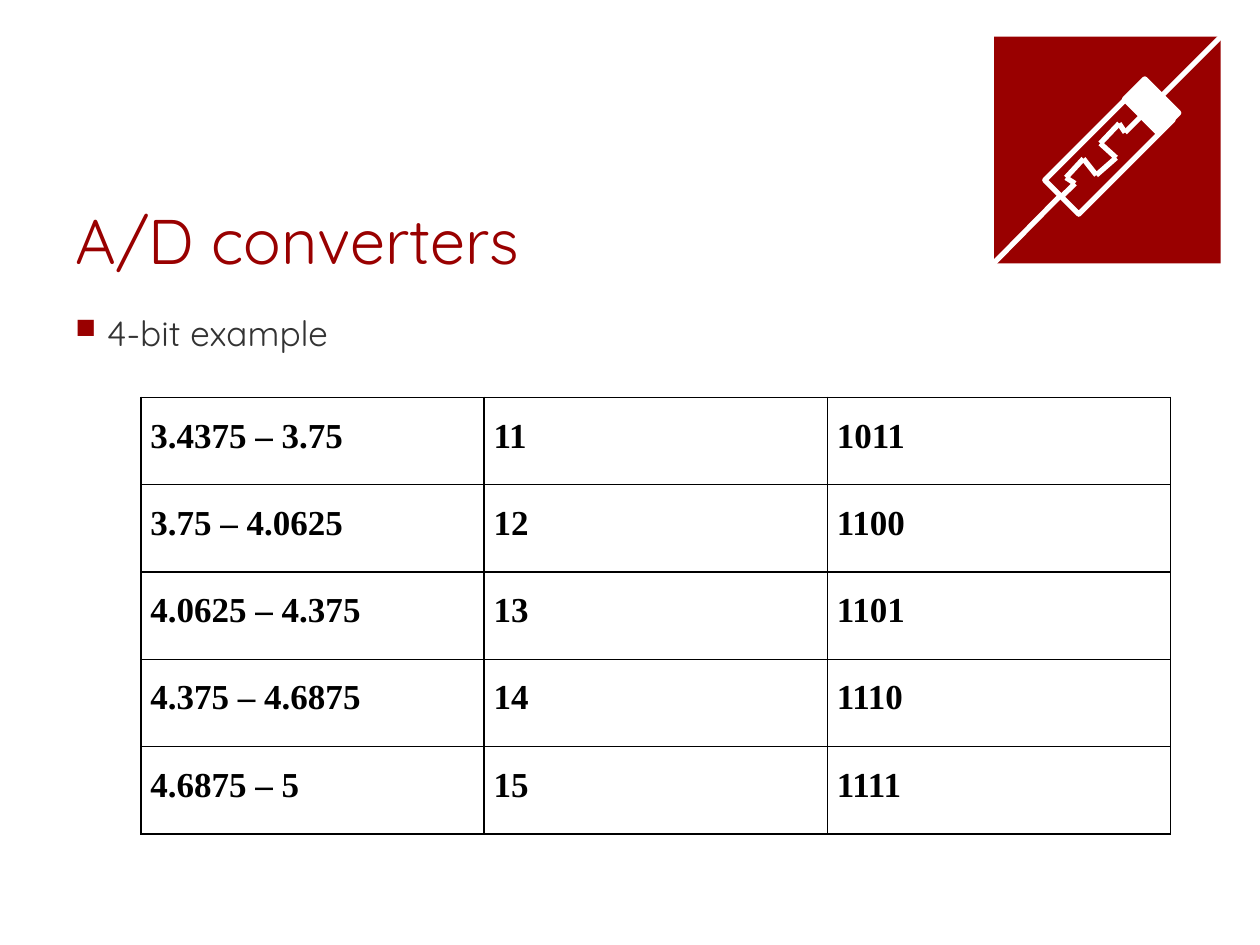
"""Build the A/D converters slide with its 4-bit example table."""
from itertools import pairwise

from lxml.etree import SubElement
from pptx import Presentation
from pptx.dml.color import RGBColor
from pptx.enum.shapes import MSO_CONNECTOR, MSO_SHAPE
from pptx.enum.text import MSO_ANCHOR, PP_ALIGN
from pptx.oxml.ns import qn
from pptx.util import Cm, Pt

COLORS = {"red": "990000", "text": "333333", "black": "000000", "white": "FFFFFF"}
TITLE = "A/D converters"
BULLET = "4-bit example"
ROWS = [
    ("3.4375 – 3.75", "11", "1011"),
    ("3.75 – 4.0625", "12", "1100"),
    ("4.0625 – 4.375", "13", "1101"),
    ("4.375 – 4.6875", "14", "1110"),
    ("4.6875 – 5", "15", "1111"),
]
TABLE_LEFT, TABLE_TOP, COLUMN_WIDTH, ROW_HEIGHT = 2.84, 8.01, 6.92, 1.76
PULSE = [(23.06, 2.29), (22.68, 2.67), (22.56, 2.49), (22.18, 2.89), (22.5, 3.18),
         (22.1, 3.53), (21.84, 3.2), (21.49, 3.58), (21.67, 3.7), (21.37, 3.99)]
LEADS = [[(23.42, 1.93), (24.64, 0.71)], [(19.96, 5.38), (21.36, 3.96)]]


def color(name):
    return RGBColor.from_string(COLORS[name])


def style(paragraph, font_name, size, color_name, bold=False):
    for span in paragraph.runs:
        span.font.name, span.font.size, span.font.bold = font_name, Pt(size), bold
        span.font.color.rgb = color(color_name)


def add_text(page, text, top, height, size, color_name, anchor):
    box = page.shapes.add_textbox(Cm(1.27), Cm(top), Cm(18.08), Cm(height))
    frame = box.text_frame
    frame.word_wrap, frame.vertical_anchor = True, anchor
    frame.text = text
    style(frame.paragraphs[0], "Quicksand", size, color_name)
    return frame.paragraphs[0]


def add_bullet(paragraph):
    paragraph.space_before = Pt(18)
    properties = paragraph._p.get_or_add_pPr()
    properties.set("marL", str(Cm(0.64)))
    properties.set("indent", str(-Cm(0.64)))
    bullet_color = SubElement(properties, qn("a:buClr"))
    SubElement(bullet_color, qn("a:srgbClr"), val=COLORS["red"])
    SubElement(properties, qn("a:buSzPct"), val="80000")
    SubElement(properties, qn("a:buChar"), char="■")


def add_borders(cell):
    properties = cell._tc.get_or_add_tcPr()
    for index, side in enumerate(("lnL", "lnR", "lnT", "lnB")):
        border = properties.makeelement(qn(f"a:{side}"), {"w": str(Pt(1))})
        fill = SubElement(border, qn("a:solidFill"))
        SubElement(fill, qn("a:srgbClr"), val=COLORS["black"])
        properties.insert(index, border)


def add_table(page):
    columns = len(ROWS[0])
    frame = page.shapes.add_table(len(ROWS), columns, Cm(TABLE_LEFT), Cm(TABLE_TOP),
                                  Cm(COLUMN_WIDTH * columns), Cm(ROW_HEIGHT * len(ROWS)))
    table = frame.table
    table.first_row = table.horz_banding = False
    for row, values in zip(table.rows, ROWS):
        for cell, value in zip(row.cells, values):
            cell.text_frame.text = value
            cell.fill.background()
            cell.margin_left = cell.margin_right = Cm(0.19)
            cell.margin_top = cell.margin_bottom = 0
            paragraph = cell.text_frame.paragraphs[0]
            paragraph.alignment = PP_ALIGN.JUSTIFY
            paragraph.line_spacing, paragraph.space_before = 1.5, Pt(12)
            style(paragraph, "Times New Roman", 20, "black", bold=True)
            add_borders(cell)


def add_rectangle(page, left, top, width, height, fill=None, line=None, rotation=0):
    shape = page.shapes.add_shape(MSO_SHAPE.RECTANGLE, Cm(left), Cm(top), Cm(width), Cm(height))
    shape.shadow.inherit = False
    shape.rotation = rotation
    if fill:
        shape.fill.solid()
        shape.fill.fore_color.rgb = color(fill)
    else:
        shape.fill.background()
    if line:
        shape.line.color.rgb, shape.line.width = color(line), Pt(3)
    else:
        shape.line.fill.background()


def add_polyline(page, points):
    for start, end in pairwise(points):
        line = page.shapes.add_connector(MSO_CONNECTOR.STRAIGHT, *map(Cm, start + end))
        line.line.color.rgb, line.line.width = color("white"), Pt(3)
        SubElement(line._element.spPr, qn("a:effectLst"))


def add_sensor_icon(page):
    add_rectangle(page, 22.73, 1.85, 0.97, 0.58, "white", "white", 45)
    add_rectangle(page, 21.87, 1.68, 0.97, 2.69, None, "white", 45)
    for points in [PULSE, *LEADS]:
        add_polyline(page, points)


def main():
    deck = Presentation()
    deck.slide_width, deck.slide_height = Cm(25.4), Cm(19.05)
    page = deck.slides.add_slide(deck.slide_layouts[6])
    add_rectangle(page, 20.04, 0.74, 4.57, 4.57, "red")
    add_text(page, TITLE, 2.54, 3.18, 36, "red", MSO_ANCHOR.BOTTOM)
    add_bullet(add_text(page, BULLET, 6.15, 10.87, 20, "text", MSO_ANCHOR.TOP))
    add_table(page)
    add_sensor_icon(page)
    deck.save("out.pptx")


if __name__ == "__main__":
    main()
